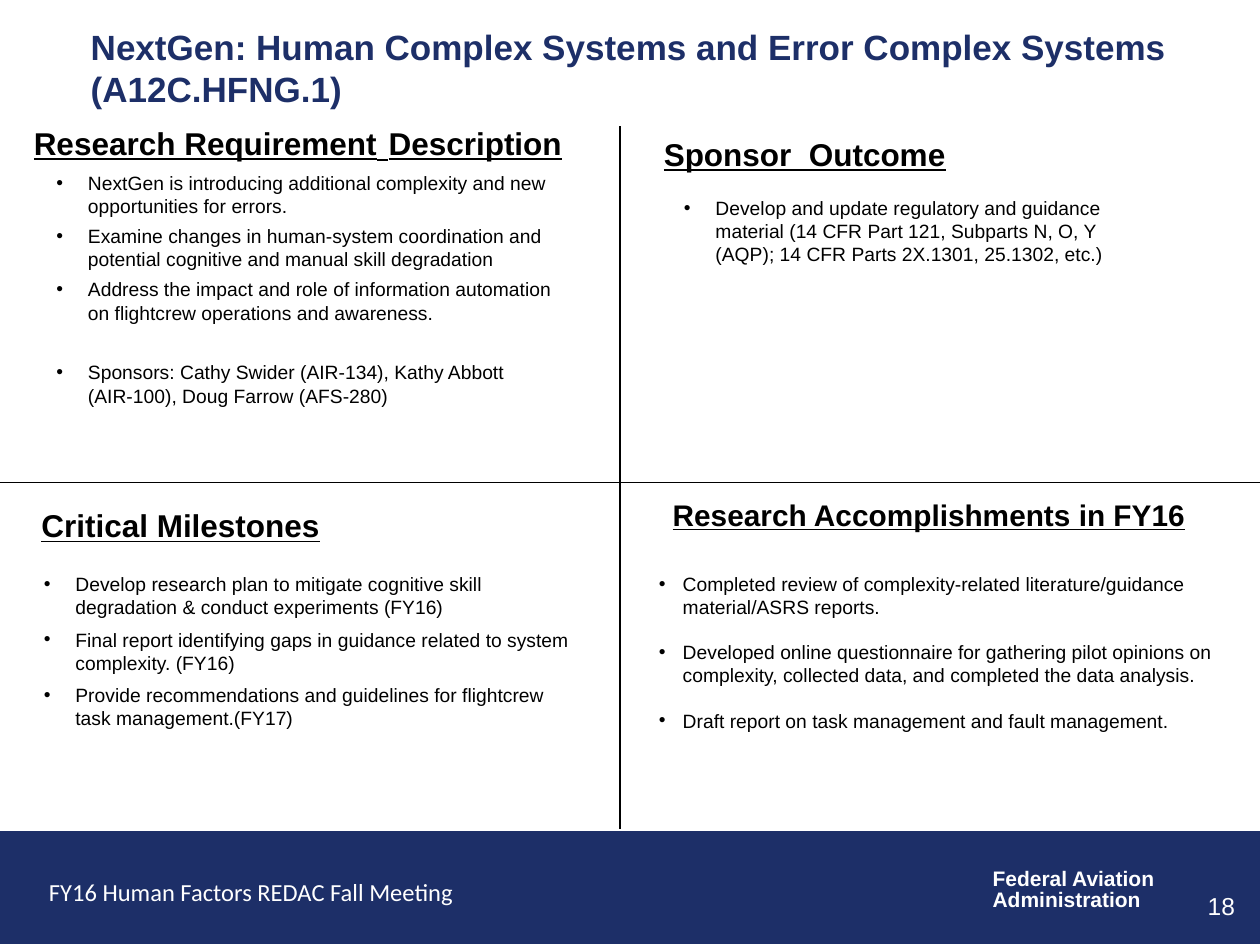
from lxml import etree
from pptx import Presentation
from pptx.dml.color import RGBColor
from pptx.enum.shapes import MSO_CONNECTOR, MSO_SHAPE
from pptx.enum.text import MSO_ANCHOR, MSO_AUTO_SIZE, PP_ALIGN
from pptx.oxml.ns import qn
from pptx.util import Inches, Pt

NAVY = RGBColor(0x1D, 0x2F, 0x68)
BLACK = RGBColor(0, 0, 0)
WHITE = RGBColor(255, 255, 255)
LINE = MSO_CONNECTOR.STRAIGHT
RECT = MSO_SHAPE.RECTANGLE
TOP = MSO_ANCHOR.TOP
FIXED = MSO_AUTO_SIZE.NONE
LEFT, RIGHT = PP_ALIGN.LEFT, PP_ALIGN.RIGHT

# Grid of 100 columns by 75 rows
COLS, ROWS = 100, 75
prs = Presentation()
prs.slide_width, prs.slide_height = Inches(10), Inches(7.5)
CELL = prs.slide_width / COLS
slide = prs.slides.add_slide(prs.slide_layouts[5])
shapes = slide.shapes


def place(*cells):
    return [round(n * CELL) for n in cells]


def write(para, text, size, color, bold=False, under=False, face="Arial"):
    run = para.add_run()
    run.text = text
    font = run.font
    font.name, font.size, font.bold = face, Pt(size), bold
    font.underline = under
    font.color.rgb = color


# Footer band
band = shapes.add_shape(RECT, *place(0, 66, COLS, 8.9))
band.shadow.inherit = False
band.fill.solid()
band.fill.fore_color.rgb = NAVY
band.line.color.rgb = NAVY
band.line.width = Pt(0.75)

# Title
title = shapes.title
title.left, title.top, title.width, title.height = place(6.2, 1.5, 92.7, 7)
frame = title.text_frame
frame.word_wrap = True
frame.auto_size = FIXED
frame.vertical_anchor = TOP
para = frame.paragraphs[0]
para.alignment = LEFT
write(para, "NextGen: Human Complex Systems and Error Complex Systems (A12C.HFNG.1)",
      20, NAVY, bold=True)

# Lines between the quadrants
for ends in ((49.2, 10, 49.2, 65.8), (0, 38.3, COLS, 38.3)):
    rule = shapes.add_connector(LINE, *place(*ends))
    rule.line.color.rgb = BLACK
    rule.line.width = Pt(0.75)
    etree.SubElement(rule._element.spPr, qn("a:effectLst"))

# Quadrant headings: cells, then (text, size) runs
heads = [
    ((1.7, 8.5, 50, 3.3),
     [("Research Requirement", 18), (" ", 24), ("Description", 18)]),
    ((51.7, 10.2, 46.7, 3.3), [("Sponsor  Outcome", 18)]),
    ((2.3, 39.7, 45, 3.8), [("Critical Milestones", 18)]),
    ((52.4, 38.9, 44.2, 5.4), [("Research Accomplishments in FY16", 17)]),
]
for cells, runs in heads:
    frame = shapes.add_textbox(*place(*cells)).text_frame
    frame.word_wrap = True
    for text, size in runs:
        write(frame.paragraphs[0], text, size, BLACK, bold=True, under=True)

# Quadrant bullets: cells, indent in cells, then (space before, text)
lists = [
    ((3.5, 13.1, 42.3, 19.9), 2.5, [
        (0, "NextGen is introducing additional complexity and new opportunities for errors."),
        (4, "Examine changes in human-system coordination and potential cognitive and manual skill degradation"),
        (4, "Address the impact and role of information automation on flightcrew operations and awareness."),
        (21, "Sponsors: Cathy Swider (AIR-134), Kathy Abbott (AIR-100), Doug Farrow (AFS-280)"),
    ]),
    ((53.3, 15.1, 39.1, 6.6), 2.5, [
        (0, "Develop and update regulatory and guidance material (14 CFR Part 121, Subparts N, O, Y (AQP); 14 CFR Parts 2X.1301, 25.1302, etc.)"),
    ]),
    ((2.5, 44.9, 44.8, 14), 2.5, [
        (0, "Develop research plan to mitigate cognitive skill degradation & conduct experiments (FY16)"),
        (5.5, "Final report identifying gaps in guidance related to system complexity. (FY16)"),
        (5.5, "Provide recommendations and guidelines for flightcrew task management.(FY17)"),
    ]),
    ((51.3, 44.9, 47.5, 17.3), 1.9, [
        (0, "Completed review of complexity-related literature/guidance material/ASRS reports."),
        (12.7, "Developed online questionnaire for gathering pilot opinions on complexity, collected data, and completed the data analysis."),
        (12.7, "Draft report on task management and fault management."),
    ]),
]
for cells, indent, items in lists:
    frame = shapes.add_textbox(*place(*cells)).text_frame
    frame.word_wrap = True
    for i, (gap, text) in enumerate(items):
        para = frame.add_paragraph() if i else frame.paragraphs[0]
        props = para._p.get_or_add_pPr()
        step = round(indent * CELL)
        props.set("marL", str(step))
        props.set("indent", str(-step))
        etree.SubElement(props, qn("a:buFont"), typeface="Arial")
        etree.SubElement(props, qn("a:buChar"), char="•")
        para.space_before = Pt(gap)
        write(para, text, 11, BLACK)

# Footer text: agency, meeting, page number
frame = shapes.add_textbox(*place(77.8, 68.5, 15, 4.4)).text_frame
frame.word_wrap = False
for i, text in enumerate(("Federal Aviation", "Administration")):
    para = frame.add_paragraph() if i else frame.paragraphs[0]
    para.line_spacing = 0.85
    write(para, text, 12, WHITE, bold=True)

frame = shapes.add_textbox(*place(2.9, 69.1, 34.4, 3.4)).text_frame
frame.word_wrap = False
write(frame.paragraphs[0], "FY16 Human Factors REDAC Fall Meeting", 14, WHITE,
      face="Calibri")

frame = shapes.add_textbox(*place(75.7, 70.2, 23.3, 3.6)).text_frame
frame.word_wrap = True
frame.paragraphs[0].alignment = RIGHT
write(frame.paragraphs[0], "18", 14, WHITE)

prs.save("out.pptx")
